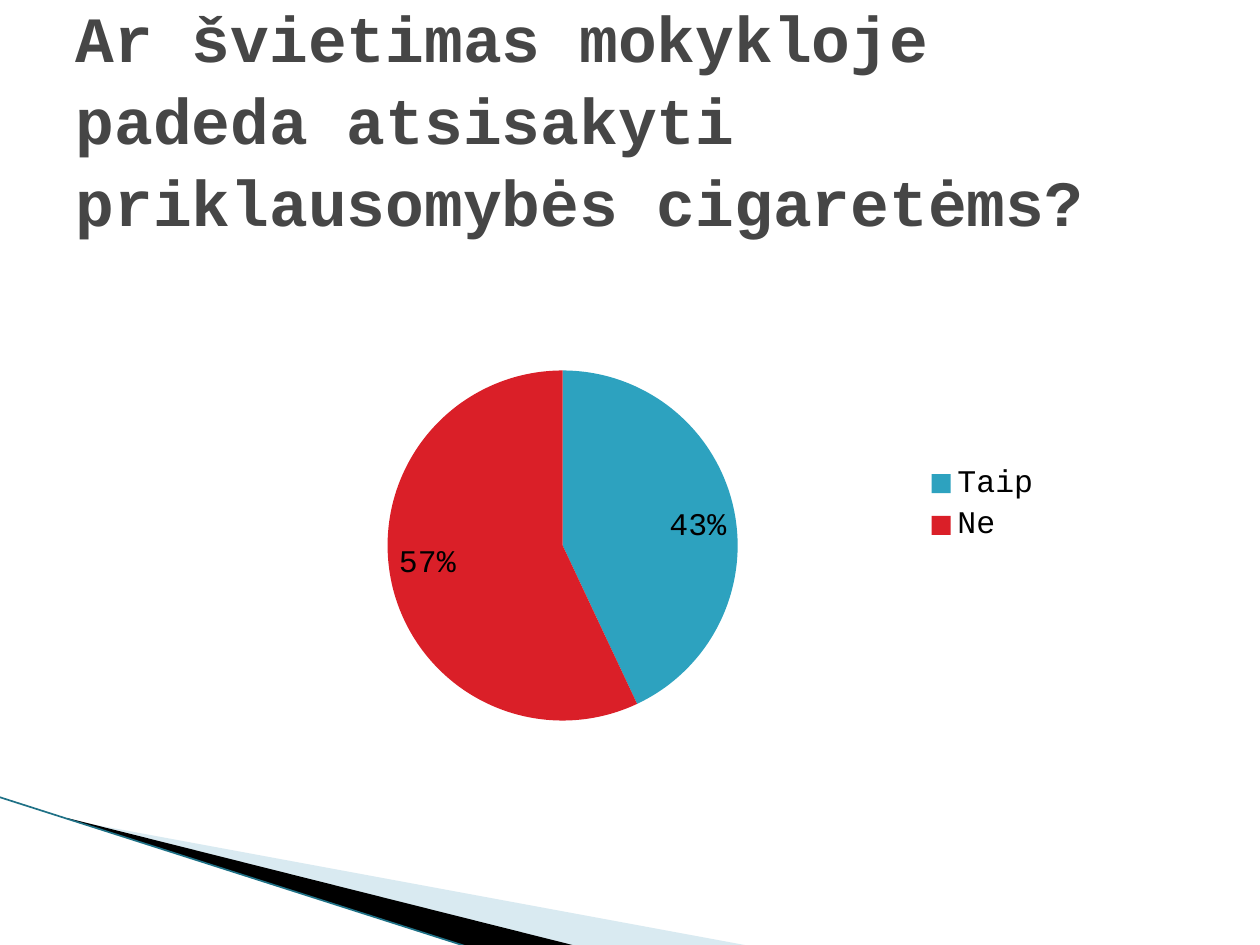
from lxml import etree
from pptx import Presentation, util as u
from pptx.chart.data import CategoryChartData
from pptx.dml.color import RGBColor
from pptx.enum import chart as ch, shapes, text
from pptx.oxml.ns import qn

# Content
QUESTION = "Ar švietimas mokykloje padeda atsisakyti priklausomybės cigaretėms?"
ANSWERS = [("Taip", 43, "taip"), ("Ne", 57, "ne")]
FONT = "Courier New"
COLORS = {"title": "464646", "text": "000000", "taip": "2DA2BF", "ne": "DA1F28",
          "pale": "A0CBDC", "black": "000000", "edge": "1F7186"}

# Places in px, 126 to the inch
PX = 914400 // 126
TITLE_BOX = (63, 38, 1134, 157)
CHART_BOX = (204, 271, 850, 467)
WEDGES = [  # outline, colour, opacity in percent
    ([(69, 820), (750, 946), (575, 946), (69, 819)], "pale", 40),
    ([(67, 818), (576, 946), (469, 947), (68, 819)], "black", 100),
]
EDGE = (-1, 797, 468, 947)


def px(*values):
    return [u.Emu(v * PX) for v in values]


def rgb(name):
    return RGBColor.from_string(COLORS[name])


def style(font, size, color, bold=False):
    font.name, font.size, font.bold = FONT, u.Pt(size), bold
    font.color.rgb = rgb(color)


prs = Presentation()
prs.slide_width, prs.slide_height = px(1260, 945)
slide = prs.slides.add_slide(prs.slide_layouts[5])

# Corner wedges
for outline, color, opacity in WEDGES:
    builder = slide.shapes.build_freeform(*outline[0], scale=PX)
    builder.add_line_segments(outline[1:], close=True)
    wedge = builder.convert_to_shape()
    wedge.shadow.inherit = False
    wedge.fill.solid()
    wedge.fill.fore_color.rgb = rgb(color)
    wedge.line.fill.background()
    if opacity < 100:
        fill = wedge.fill._xPr.find(qn("a:solidFill"))[0]
        etree.SubElement(fill, qn("a:alpha"), val=str(opacity * 1000))

# Edge line of the corner
edge = slide.shapes.add_connector(shapes.MSO_CONNECTOR.STRAIGHT, *px(*EDGE))
edge.line.color.rgb = rgb("edge")
edge.line.width = u.Pt(0.95)
etree.SubElement(edge._element.spPr, qn("a:effectLst"))

# Pie chart of the answers
data = CategoryChartData()
data.categories = [name for name, _, _ in ANSWERS]
data.add_series("Series 1", [value for _, value, _ in ANSWERS])
chart = slide.shapes.add_chart(ch.XL_CHART_TYPE.PIE, *px(*CHART_BOX), data).chart
style(chart.font, 18, "text")
chart.has_title = True
heading = chart.chart_title.text_frame.paragraphs[0].add_run()
heading.text = " "
style(heading.font, 21.6, "text")
chart.has_legend = True
chart.legend.position = ch.XL_LEGEND_POSITION.RIGHT
chart.legend.include_in_layout = False
pie = chart.plots[0]
pie.vary_by_categories = True
for i, (_, _, color) in enumerate(ANSWERS):
    slice_fill = pie.series[0].points[i].format.fill
    slice_fill.solid()
    slice_fill.fore_color.rgb = rgb(color)
pie.has_data_labels = True
labels = pie.data_labels
labels.show_percentage, labels.show_value = True, False
labels.number_format, labels.number_format_is_linked = "0%", False
labels.position = ch.XL_LABEL_POSITION.INSIDE_END
style(labels.font, 18, "text")

# Title
title = slide.shapes.title
title.left, title.top, title.width, title.height = px(*TITLE_BOX)
frame = title.text_frame
frame.word_wrap = True
frame.auto_size = text.MSO_AUTO_SIZE.NONE
frame.vertical_anchor = text.MSO_ANCHOR.MIDDLE
paragraph = frame.paragraphs[0]
paragraph.alignment = text.PP_ALIGN.LEFT
paragraph.line_spacing = 1.06
question = paragraph.add_run()
question.text = QUESTION
style(question.font, 36.9, "title", bold=True)

prs.save("out.pptx")
